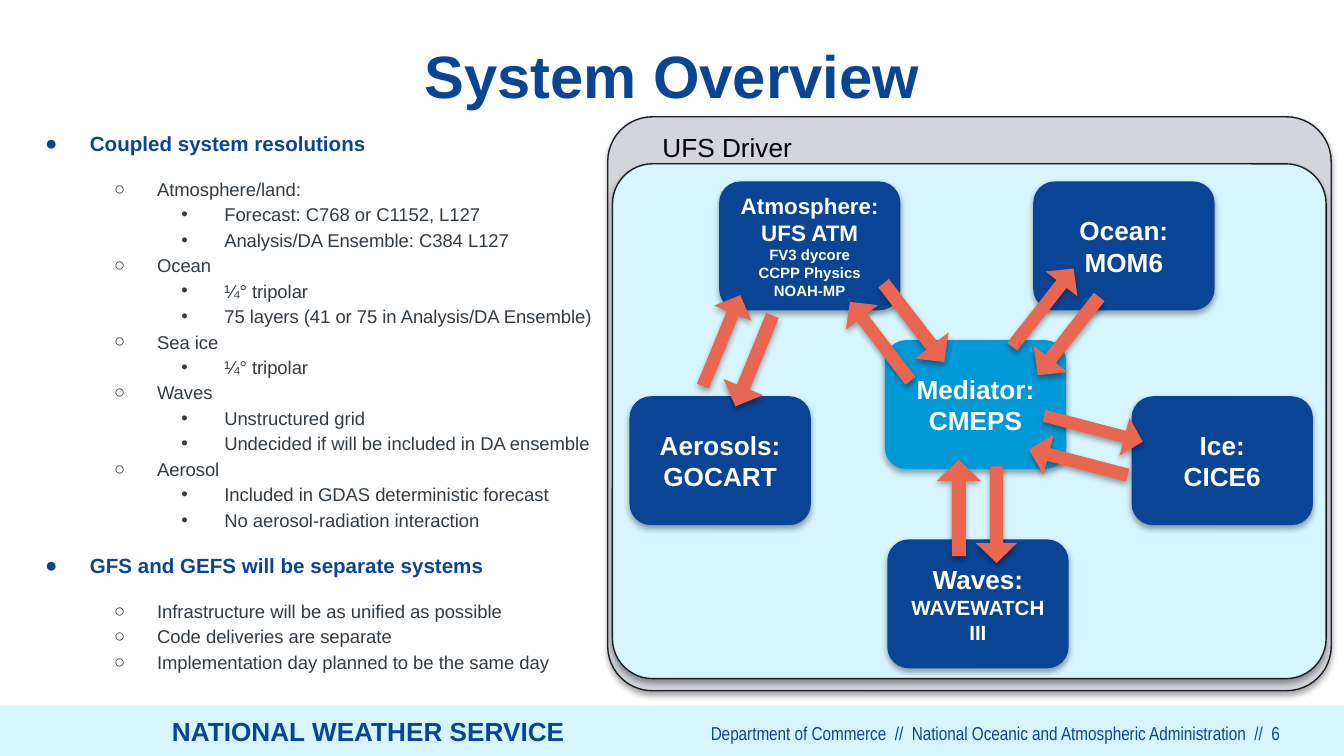
from typing import NamedTuple, Optional

from lxml import etree
from pptx import Presentation
from pptx.dml.color import RGBColor
from pptx.enum import shapes, text
from pptx.oxml import ns
from pptx.util import Pt

NAVY = RGBColor(0x0A, 0x45, 0x95)
BLUE = RGBColor(0x00, 0x99, 0xD8)
PALE = RGBColor(0xD6, 0xF5, 0xFF)
GRAY = RGBColor(0xD2, 0xD5, 0xDC)
CORAL = RGBColor(0xE9, 0x67, 0x51)
SLATE = RGBColor(0x32, 0x3B, 0x42)
INK = RGBColor(0x18, 0x1D, 0x21)
BLACK = RGBColor(0, 0, 0)
WHITE = RGBColor(0xFF, 0xFF, 0xFF)

SHAPE = shapes.MSO_SHAPE
ALIGN = text.PP_ALIGN
ANCHOR = text.MSO_ANCHOR
NODE_W, NODE_H = 97.2, 69.1


class Line(NamedTuple):
    text: str
    size: float = 14


class Node(NamedTuple):
    left: float
    top: float
    lines: list[Line]
    fill: RGBColor = NAVY


class Arrow(NamedTuple):
    left: float
    top: float
    width: float
    height: float
    rotation: float


class Level(NamedTuple):
    bullet: str
    indent: float
    hanging: float
    size: float
    color: RGBColor
    bold: bool = False


class Item(NamedTuple):
    level: int
    text: str


NODES = [
    Node(385.2, 97.2, [Line("Atmosphere:", 12), Line("UFS ATM", 12), Line("FV3 dycore", 8),
                       Line("CCPP Physics", 8), Line("NOAH-MP", 8)]),
    Node(337.2, 212.3, [Line("Aerosols:"), Line("GOCART")]),
    Node(474, 182.2, [Line("Mediator:"), Line("CMEPS")], BLUE),
    Node(553.5, 97.2, [Line("Ocean:"), Line("MOM6")]),
    Node(475.3, 289, [Line("Waves:"), Line("WAVEWATCH III", 11)]),
    Node(606.2, 212.3, [Line("Ice:"), Line("CICE6")]),
]

ARROWS = [
    Arrow(501.8, 246.2, 23.8, 51.8, 0),
    Arrow(522.7, 249.8, 22.3, 51.8, 180),
    Arrow(566.6, 220.3, 22.3, 54.7, 284.6),
    Arrow(575.3, 202.3, 20.9, 54.7, 104.7),
    Arrow(560.9, 153.4, 23, 53.3, 218.2),
    Arrow(547.9, 138.2, 21.6, 53.3, 38.2),
    Arrow(478.1, 146.2, 23, 53.3, 142.4),
    Arrow(460.8, 156.2, 21.6, 53.3, 322.5),
    Arrow(392.4, 167, 23, 52.6, 202.2),
    Arrow(375.8, 156.2, 21.6, 52.6, 22.3),
]

LEVELS = [
    Level("●", 36, 24, 11, NAVY, True),
    Level("○", 72, 23, 9.9, SLATE),
    Level("•", 108, 23, 9.9, SLATE),
]

OUTLINE = [
    Item(0, "Coupled system resolutions"),
    Item(1, "Atmosphere/land:"),
    Item(2, "Forecast: C768 or C1152, L127"),
    Item(2, "Analysis/DA Ensemble: C384 L127"),
    Item(1, "Ocean"),
    Item(2, "¼° tripolar"),
    Item(2, "75 layers (41 or 75 in Analysis/DA Ensemble)"),
    Item(1, "Sea ice"),
    Item(2, "¼° tripolar"),
    Item(1, "Waves"),
    Item(2, "Unstructured grid"),
    Item(2, "Undecided if will be included in DA ensemble"),
    Item(1, "Aerosol"),
    Item(2, "Included in GDAS deterministic forecast"),
    Item(2, "No aerosol-radiation interaction"),
    Item(0, "GFS and GEFS will be separate systems"),
    Item(1, "Infrastructure will be as unified as possible"),
    Item(1, "Code deliveries are separate"),
    Item(1, "Implementation day planned to be the same day"),
]


def write(p, content: str, *, size: float, color: RGBColor, bold: bool = False,
          font: str = "Arial", align=ALIGN.LEFT, spacing: float = 1, before: float = 0) -> None:
    p.alignment, p.line_spacing, p.space_before = align, spacing, Pt(before)
    r = p.add_run()
    r.text = content
    r.font.name, r.font.size, r.font.bold = font, Pt(size), bold
    r.font.color.rgb = color


def set_margins(tf, side: float, top: float, bottom: float) -> None:
    tf.word_wrap = True
    tf.margin_left = tf.margin_right = Pt(side)
    tf.margin_top, tf.margin_bottom = Pt(top), Pt(bottom)


def add_text(s, left: float, top: float, width: float, height: float,
             margins: tuple[float, float, float]):
    tf = s.shapes.add_textbox(Pt(left), Pt(top), Pt(width), Pt(height)).text_frame
    set_margins(tf, *margins)
    return tf


def add_shadow(sp) -> None:
    effects = sp._element.spPr.find(ns.qn("a:effectLst"))
    shadow = etree.SubElement(effects, ns.qn("a:outerShdw"), blurRad="40000", dist="23000",
                              dir="5400000", rotWithShape="0")
    color = etree.SubElement(shadow, ns.qn("a:srgbClr"), val=str(BLACK))
    etree.SubElement(color, ns.qn("a:alpha"), val="35000")


def add_shape(s, kind, left: float, top: float, width: float, height: float, fill: RGBColor,
              *, adjust: tuple[float, ...] = (), line: Optional[RGBColor] = None,
              shadow: bool = True):
    sp = s.shapes.add_shape(kind, Pt(left), Pt(top), Pt(width), Pt(height))
    for i, value in enumerate(adjust):
        sp.adjustments[i] = value
    sp.fill.solid()
    sp.fill.fore_color.rgb = fill
    if line is None:
        sp.line.fill.background()
    else:
        sp.line.color.rgb, sp.line.width = line, Pt(0.75)
    sp.shadow.inherit = False
    if shadow:
        add_shadow(sp)
    return sp


def add_bullet(p, level: Level) -> None:
    pPr = p._p.get_or_add_pPr()
    pPr.set("marL", str(Pt(level.indent)))
    pPr.set("indent", str(-Pt(level.hanging)))
    color = etree.SubElement(pPr, ns.qn("a:buClr"))
    etree.SubElement(color, ns.qn("a:srgbClr"), val=str(level.color))
    etree.SubElement(pPr, ns.qn("a:buFont"), typeface="Arial")
    etree.SubElement(pPr, ns.qn("a:buChar"), char=level.bullet)


def add_outline(s, items: list[Item]) -> None:
    """Headings, and the first line below each, stand 10 pt apart."""
    tf = add_text(s, 12.2, 68.4, 307.5, 307.5, (0, 0, 3.6))
    for i, item in enumerate(items):
        p = tf.add_paragraph() if i else tf.paragraphs[0]
        level = LEVELS[item.level]
        p.level = item.level
        add_bullet(p, level)
        spaced = i > 0 and 0 in (item.level, items[i - 1].level)
        write(p, item.text, size=level.size, color=level.color, bold=level.bold,
              spacing=1.15, before=10 if spaced else 0)


def add_node(s, node: Node) -> None:
    sp = add_shape(s, SHAPE.ROUNDED_RECTANGLE, node.left, node.top, NODE_W, NODE_H, node.fill,
                   adjust=(0.167,))
    tf = sp.text_frame
    set_margins(tf, 7.2, 3.6, 3.6)
    tf.vertical_anchor = ANCHOR.MIDDLE
    for i, line in enumerate(node.lines):
        p = tf.add_paragraph() if i else tf.paragraphs[0]
        write(p, line.text, size=line.size, color=WHITE, bold=True, align=ALIGN.CENTER)


def add_arrow(s, arrow: Arrow) -> None:
    sp = add_shape(s, SHAPE.UP_ARROW, *arrow[:4], CORAL, adjust=(0.316, 0.486))
    sp.rotation = arrow.rotation


def main() -> None:
    prs = Presentation()
    prs.slide_width, prs.slide_height = Pt(720), Pt(405)
    s = prs.slides.add_slide(prs.slide_layouts[6])

    add_shape(s, SHAPE.RECTANGLE, 0, 378, 720, 27, PALE, shadow=False)
    tf = add_text(s, 85, 375.8, 286.6, 36.7, (7.2, 7.2, 7.2))
    write(tf.paragraphs[0], "NATIONAL WEATHER SERVICE", size=14, color=NAVY, bold=True)
    tf = add_text(s, 115.2, 386.6, 570.2, 9.4, (0, 0, 0))
    write(tf.paragraphs[0], "Department of Commerce  //  National Oceanic and Atmospheric "
          "Administration  //  6", size=10, color=NAVY, font="Arial Narrow", align=ALIGN.RIGHT)

    tf = add_text(s, 36, 21.6, 648, 46.8, (0, 3.6, 3.6))
    write(tf.paragraphs[0], "System Overview", size=32, color=NAVY, bold=True,
          align=ALIGN.CENTER, spacing=0.9)
    add_outline(s, OUTLINE)

    for box, fill in (((325.6, 62.6, 387.6, 307.5), GRAY), ((328.1, 87.8, 382.3, 275.8), PALE)):
        add_shape(s, SHAPE.ROUNDED_RECTANGLE, *box, fill, adjust=(0.078,), line=INK)
    tf = add_text(s, 347.8, 67, 301.7, 15.1, (7.2, 3.6, 3.6))
    write(tf.paragraphs[0], "UFS Driver", size=14, color=BLACK)
    for node in NODES:
        add_node(s, node)
    for arrow in ARROWS:
        add_arrow(s, arrow)

    prs.save("out.pptx")


if __name__ == "__main__":
    main()
